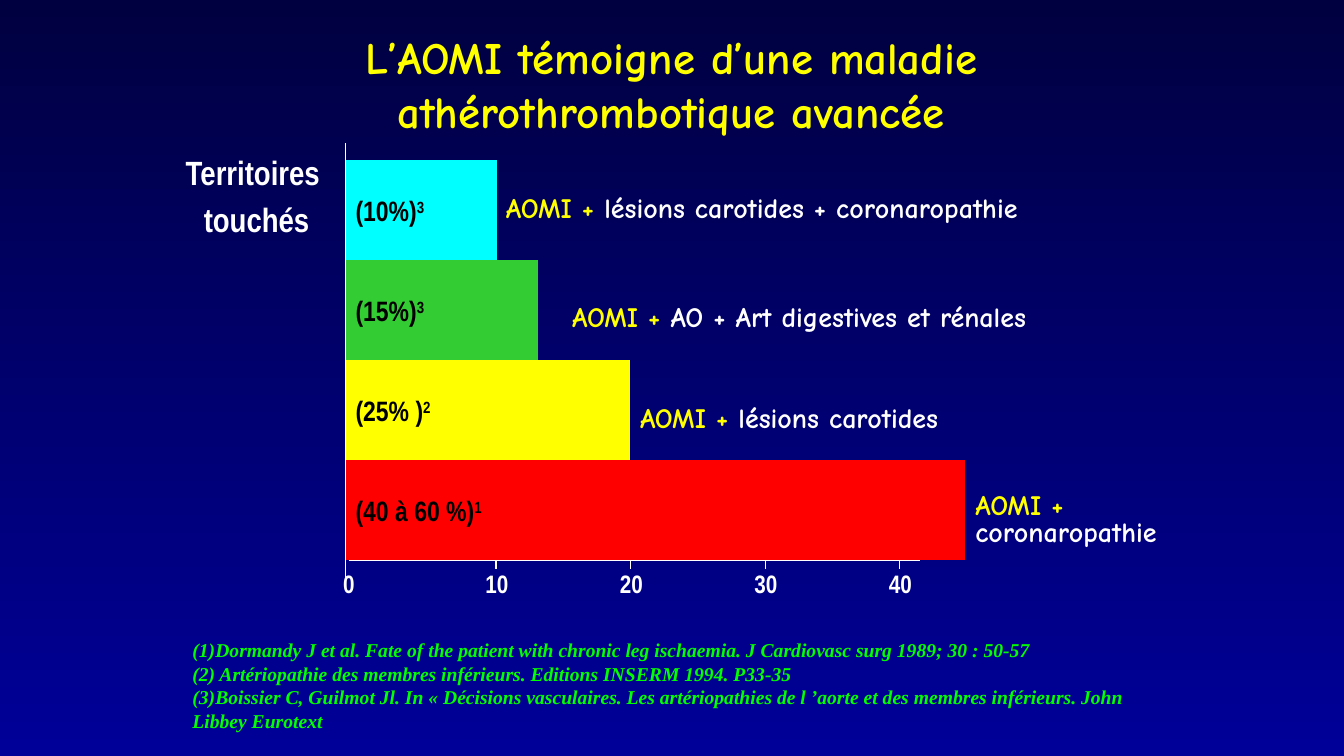
from dataclasses import dataclass

from lxml import etree
from pptx import Presentation
from pptx import util as u
from pptx.dml.color import RGBColor
from pptx.enum import shapes, text
from pptx.oxml import ns

Cm, Pt = u.Cm, u.Pt


@dataclass(frozen=True)
class Theme:
    top: str = "000041"
    base: str = "000099"
    white: str = "FFFFFF"
    black: str = "000000"
    yellow: str = "FFFF00"
    cyan: str = "00FFFF"
    green: str = "33CC33"
    red: str = "FF0000"
    lime: str = "00FF00"
    hand: str = "Comic Neue"
    sans: str = "Arial Narrow"
    serif: str = "Times New Roman"
    title: int = 32
    head: int = 24
    body: int = 20
    tick: int = 18
    note: int = 14


T = Theme()
LEFT, TOP, ROW = 8.71, 4.04, 2.52  # bar grid, in cm
TICK, STEP = 12.5, 3.39  # first tick and gap between ticks, in cm

# share, reference, bar width, colour, rest of label, label left, top, width
BARS = [
    ("(10%)", "3", 3.81, T.cyan, " lésions carotides + coronaropathie", 12.5, 4.67, 15.4),
    ("(15%)", "3", 4.85, T.green, " AO + Art digestives et rénales", 14.17, 7.42, 14.35),
    ("(25% )", "2", 7.16, T.yellow, " lésions carotides", 15.88, 9.96, 9.3),
    ("(40 à 60 %)", "1", 15.62, T.red, " coronaropathie", 24.33, 12.32, 6.1),
]

NOTES = [
    "(1)Dormandy J et al. Fate of the patient with chronic leg ischaemia. "
    "J Cardiovasc surg 1989; 30 : 50-57",
    "(2) Artériopathie des membres inférieurs. Editions INSERM 1994. P33-35",
    "(3)Boissier C, Guilmot Jl. In « Décisions vasculaires. Les artériopathies "
    "de l ’aorte et des membres inférieurs. John Libbey Eurotext",
]


def style(run, face, size, color, italic=None):
    font = run.font
    font.name, font.size, font.bold, font.italic = face, Pt(size), True, italic
    font.color.rgb = RGBColor.from_string(color)


def add_text(slide, box, lines, face, size, color, align=None, wrap=True, italic=None):
    frame = slide.shapes.add_textbox(*map(Cm, box)).text_frame
    frame.word_wrap = wrap
    frame.text = "\n".join(lines)
    for para in frame.paragraphs:
        para.alignment = align
        for run in para.runs:
            style(run, face, size, color, italic)
    return frame


def add_line(slide, x1, y1, x2, y2):
    line = slide.shapes.add_connector(
        shapes.MSO_CONNECTOR.STRAIGHT, Cm(x1), Cm(y1), Cm(x2), Cm(y2))
    line.line.color.rgb = RGBColor.from_string(T.white)
    line.line.width = Pt(0.75)
    etree.SubElement(line._element.spPr, ns.qn("a:effectLst"))


def add_bar(slide, top, width, color, share, ref):
    bar = slide.shapes.add_shape(
        shapes.MSO_SHAPE.ACTION_BUTTON_CUSTOM, Cm(LEFT), Cm(top), Cm(width), Cm(ROW))
    bar.shadow.inherit = False
    bar.fill.solid()
    bar.fill.fore_color.rgb = RGBColor.from_string(color)
    bar.line.fill.background()
    frame = bar.text_frame
    frame.vertical_anchor = text.MSO_ANCHOR.MIDDLE
    para = frame.paragraphs[0]
    para.text = share
    para.alignment = text.PP_ALIGN.LEFT
    para.add_run().text = ref
    for run in para.runs:
        style(run, T.sans, T.body, T.black)
    para.runs[1]._r.get_or_add_rPr().set("baseline", "30000")


def add_label(slide, box, rest):
    frame = add_text(slide, box, ["AOMI +"], T.hand, T.body, T.yellow)
    run = frame.paragraphs[0].add_run()
    run.text = rest
    style(run, T.hand, T.body, T.white)
    return frame


def add_axes(slide):
    base = TOP + len(BARS) * ROW
    add_line(slide, 8.79, base, 23.19, base)
    marks = [TICK + i * STEP for i in range(4)]
    for x in marks:
        add_line(slide, x, 13.69, x, 14.33)
    for i, x in enumerate([8.77] + marks):
        add_text(slide, (x - 0.53, 14.2, 1.1, 1.02), [str(i * 10)], T.sans, T.tick,
                 T.white, text.PP_ALIGN.CENTER, wrap=False)


def main():
    deck = Presentation()
    deck.slide_width, deck.slide_height = Cm(33.87), Cm(19.05)
    slide = deck.slides.add_slide(deck.slide_layouts[6])

    # Background
    fill = slide.background.fill
    fill.gradient()
    fill.gradient_angle = 270
    for stop, color, at in zip(fill.gradient_stops, (T.top, T.base), (0, 1)):
        stop.color.rgb = RGBColor.from_string(color)
        stop.position = at

    # Title
    title = add_text(slide, (4.6, 0.84, 24.64, 2.54),
                     ["L’AOMI témoigne d’une maladie athérothrombotique avancée"],
                     T.hand, T.title, T.yellow, text.PP_ALIGN.CENTER)
    title.vertical_anchor = text.MSO_ANCHOR.MIDDLE

    # Axes, bars and their labels
    add_axes(slide)
    for i, (share, ref, width, color, rest, x, y, span) in enumerate(BARS):
        add_bar(slide, TOP + i * ROW, width, color, share, ref)
        label = add_label(slide, (x, y, span, 1.09), rest)
    label.paragraphs[0].line_spacing = 0.8
    add_line(slide, LEFT, 3.61, LEFT, 14.6)

    # Axis heading
    head = add_text(slide, (4.4, 3.7, 3.94, 2.4), ["Territoires", " touchés"], T.sans,
                    T.head, T.white, text.PP_ALIGN.CENTER, wrap=False)
    head.paragraphs[1].space_before = Pt(5)

    # References
    add_text(slide, (4.6, 15.95, 24.64, 2.64), NOTES, T.serif, T.note, T.lime, italic=True)

    deck.save("out.pptx")


if __name__ == "__main__":
    main()
